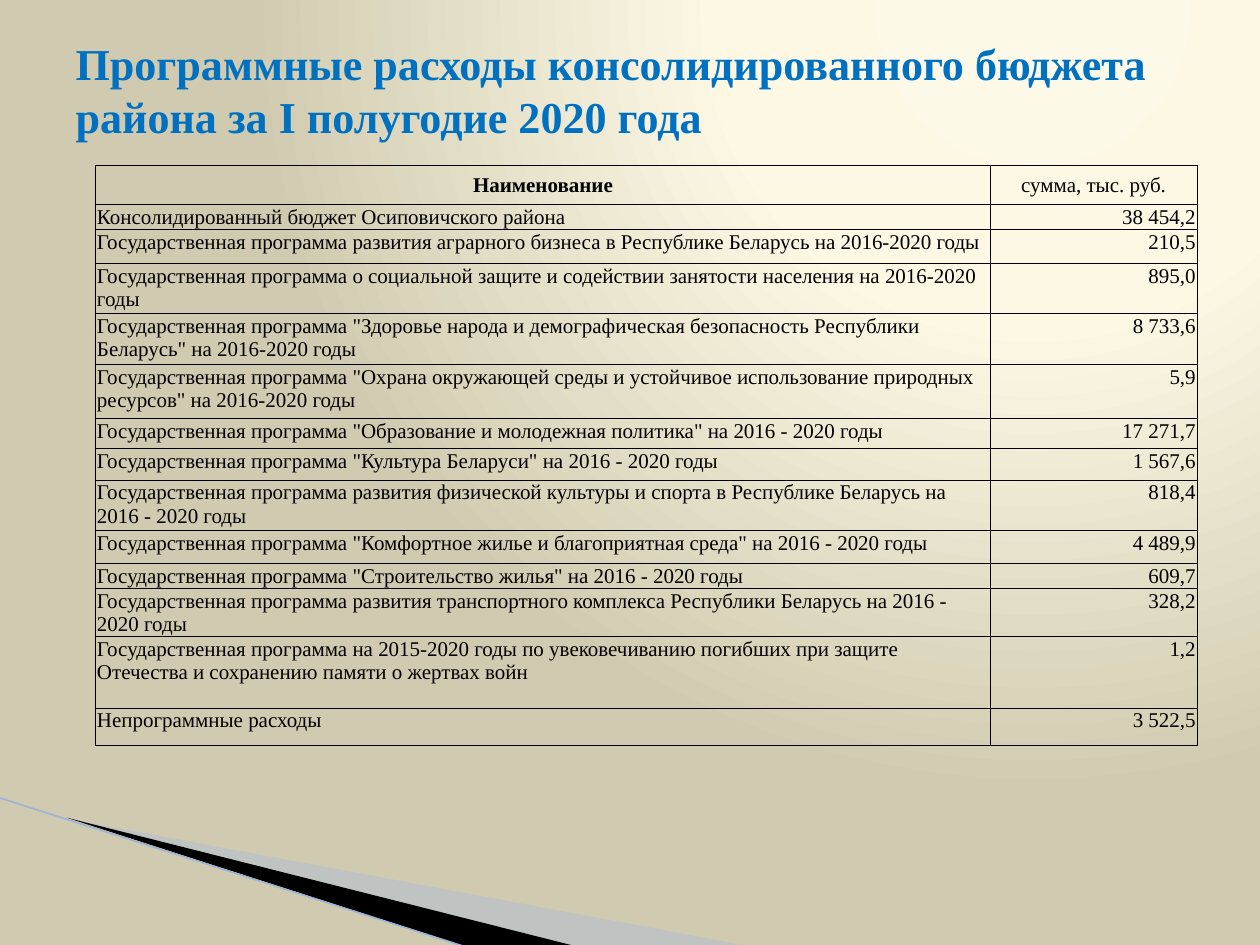
from lxml.etree import SubElement
from pptx import Presentation
from pptx.dml.color import RGBColor
from pptx.enum.shapes import MSO_CONNECTOR
from pptx.enum.text import MSO_ANCHOR, PP_ALIGN
from pptx.oxml import parse_xml
from pptx.oxml.ns import nsdecls, qn
from pptx.util import Inches, Pt

BLACK = RGBColor(0x00, 0x00, 0x00)
TITLE_BLUE = RGBColor(0x00, 0x70, 0xC0)
MIST_BLUE = RGBColor(0xA7, 0xB9, 0xDB)
EDGE_BLUE = RGBColor(0x9E, 0xB3, 0xD6)
GLOW_STOPS = [
    (0, RGBColor(0xFD, 0xF9, 0xE8)),
    (40, RGBColor(0xFC, 0xF8, 0xE4)),
    (100, RGBColor(0xD0, 0xCB, 0xB0)),
]

COLUMNS, ROWS = 100, 75
TITLE = "Программные расходы консолидированного бюджета района за I полугодие 2020 года"
HEADER = ("Наименование", "сумма, тыс. руб.")
PROGRAM = "Государственная программа "

# Name, amount and height in grid rows
EXPENSES = [
    ("Консолидированный бюджет Осиповичского района", "38 454,2", 2),
    (PROGRAM + "развития аграрного бизнеса в Республике Беларусь на 2016-2020 годы",
     "210,5", 2.7),
    (PROGRAM + "о социальной защите и содействии занятости населения на 2016-2020 годы",
     "895,0", 4),
    (PROGRAM + '"Здоровье народа и демографическая безопасность Республики Беларусь" '
     "на 2016-2020 годы", "8 733,6", 4),
    (PROGRAM + '"Охрана окружающей среды и устойчивое использование природных ресурсов" '
     "на 2016-2020 годы", "5,9", 4.3),
    (PROGRAM + '"Образование и молодежная политика" на 2016 - 2020 годы', "17 271,7", 2.4),
    (PROGRAM + '"Культура Беларуси" на 2016 - 2020 годы', "1 567,6", 2.5),
    (PROGRAM + "развития физической культуры и спорта в Республике Беларусь "
     "на 2016 - 2020 годы", "818,4", 4),
    (PROGRAM + '"Комфортное жилье и благоприятная среда" на 2016 - 2020 годы',
     "4 489,9", 2.6),
    (PROGRAM + '"Строительство жилья" на 2016 - 2020 годы', "609,7", 2),
    (PROGRAM + "развития транспортного комплекса Республики Беларусь на 2016 - 2020 годы",
     "328,2", 3.8),
    (PROGRAM + "на 2015-2020 годы по увековечиванию погибших при защите Отечества "
     "и сохранению памяти о жертвах войн", "1,2", 5.7),
    ("Непрограммные расходы", "3 522,5", 3),
]


class SlideBuilder:
    """Places styled elements on a grid of COLUMNS by ROWS."""

    font_name = "Times New Roman"
    border_width = Pt(0.5)

    def __init__(self, deck):
        self.column = deck.slide_width / COLUMNS
        self.row = deck.slide_height / ROWS
        self.slide = deck.slides.add_slide(deck.slide_layouts.get_by_name("Title Only"))
        self.shapes = self.slide.shapes

    def x(self, columns):
        return round(columns * self.column)

    def y(self, rows):
        return round(rows * self.row)

    def style_text(self, frame, size, color, bold=False, align=PP_ALIGN.LEFT):
        for para in frame.paragraphs:
            para.alignment = align
            for span in para.runs:
                span.font.name = self.font_name
                span.font.size = Pt(size)
                span.font.bold = bold
                span.font.color.rgb = color

    def glow_background(self, stops, left, top, right, bottom):
        """Radial gradient; the sides give its centre as percent insets."""
        fill = self.slide.background.fill
        fill.gradient()
        gradient = self.slide.background._cSld.find(".//" + qn("a:gradFill"))
        stop_xml = "".join(
            f'<a:gs pos="{share * 1000}"><a:srgbClr val="{color}"/></a:gs>'
            for share, color in stops
        )
        glow = parse_xml(
            f'<a:gradFill {nsdecls("a")} rotWithShape="1"><a:gsLst>{stop_xml}</a:gsLst>'
            f'<a:path path="circle"><a:fillToRect l="{left * 1000}" t="{top * 1000}" '
            f'r="{right * 1000}" b="{bottom * 1000}"/></a:path></a:gradFill>'
        )
        gradient.getparent().replace(gradient, glow)

    def wedge(self, corners, color, opacity=100):
        points = [(self.x(column), self.y(row)) for column, row in corners]
        outline = self.shapes.build_freeform(*points[0])
        outline.add_line_segments(points[1:], close=True)
        shape = outline.convert_to_shape()
        shape.shadow.inherit = False
        shape.fill.solid()
        shape.fill.fore_color.rgb = color
        shape.line.fill.background()
        if opacity < 100:
            color_node = shape.fill._xPr.find(".//" + qn("a:srgbClr"))
            SubElement(color_node, qn("a:alpha"), val=str(opacity * 1000))

    def line(self, start, end, color, width):
        connector = self.shapes.add_connector(
            MSO_CONNECTOR.STRAIGHT,
            self.x(start[0]), self.y(start[1]), self.x(end[0]), self.y(end[1]),
        )
        connector.line.color.rgb = color
        connector.line.width = Pt(width)
        SubElement(connector._element.spPr, qn("a:effectLst"))

    def title(self, text, left, top, width, height, size):
        box = self.shapes.title
        box.left, box.top = self.x(left), self.y(top)
        box.width, box.height = self.x(width), self.y(height)
        frame = box.text_frame
        frame.text = text
        frame.word_wrap = True
        frame.vertical_anchor = MSO_ANCHOR.MIDDLE
        self.style_text(frame, size, TITLE_BLUE, bold=True)

    def cell(self, cell, text, align, bold=False, anchor=MSO_ANCHOR.TOP):
        cell.text = text
        cell.margin_left = cell.margin_right = cell.margin_top = Inches(0.01)
        cell.margin_bottom = 0
        cell.vertical_anchor = anchor
        self.style_text(cell.text_frame, 12, BLACK, bold, align)
        properties = cell._tc.get_or_add_tcPr()
        for side in ("lnL", "lnR", "lnT", "lnB"):
            border = SubElement(properties, qn(f"a:{side}"), w=str(self.border_width))
            solid = SubElement(border, qn("a:solidFill"))
            SubElement(solid, qn("a:srgbClr"), val=str(BLACK))
        cell.fill.background()

    def table(self, header, expenses, left, top, widths, header_height):
        heights = [header_height] + [height for _, _, height in expenses]
        table = self.shapes.add_table(
            len(heights), len(widths), self.x(left), self.y(top),
            self.x(sum(widths)), self.y(sum(heights)),
        ).table
        table.horz_banding = False
        for column, width in zip(table.columns, widths):
            column.width = self.x(width)
        for row, height in zip(table.rows, heights):
            row.height = self.y(height)
        for index, text in enumerate(header):
            self.cell(table.cell(0, index), text, PP_ALIGN.CENTER,
                      bold=index == 0, anchor=MSO_ANCHOR.MIDDLE)
        for index, (name, amount, _) in enumerate(expenses, start=1):
            self.cell(table.cell(index, 0), name, PP_ALIGN.LEFT)
            self.cell(table.cell(index, 1), amount, PP_ALIGN.RIGHT)


def main():
    deck = Presentation()
    deck.slide_width, deck.slide_height = Inches(10), Inches(7.5)
    page = SlideBuilder(deck)
    page.glow_background(GLOW_STOPS, left=65, top=0, right=0, bottom=98)
    page.wedge([(5.5, 65), (59.5, 75.1), (45.6, 75.1)], MIST_BLUE, opacity=40)
    page.wedge([(5.3, 64.9), (45.7, 75.1), (37.2, 75.2)], BLACK)
    page.line((-0.1, 63.3), (37.1, 75.2), EDGE_BLUE, 0.95)
    page.title(TITLE, left=5, top=3, width=90, height=8.2, size=25.2)
    page.table(HEADER, EXPENSES, left=7.6, top=13.1, widths=(71, 16.4), header_height=3.1)
    deck.save("out.pptx")


if __name__ == "__main__":
    main()
